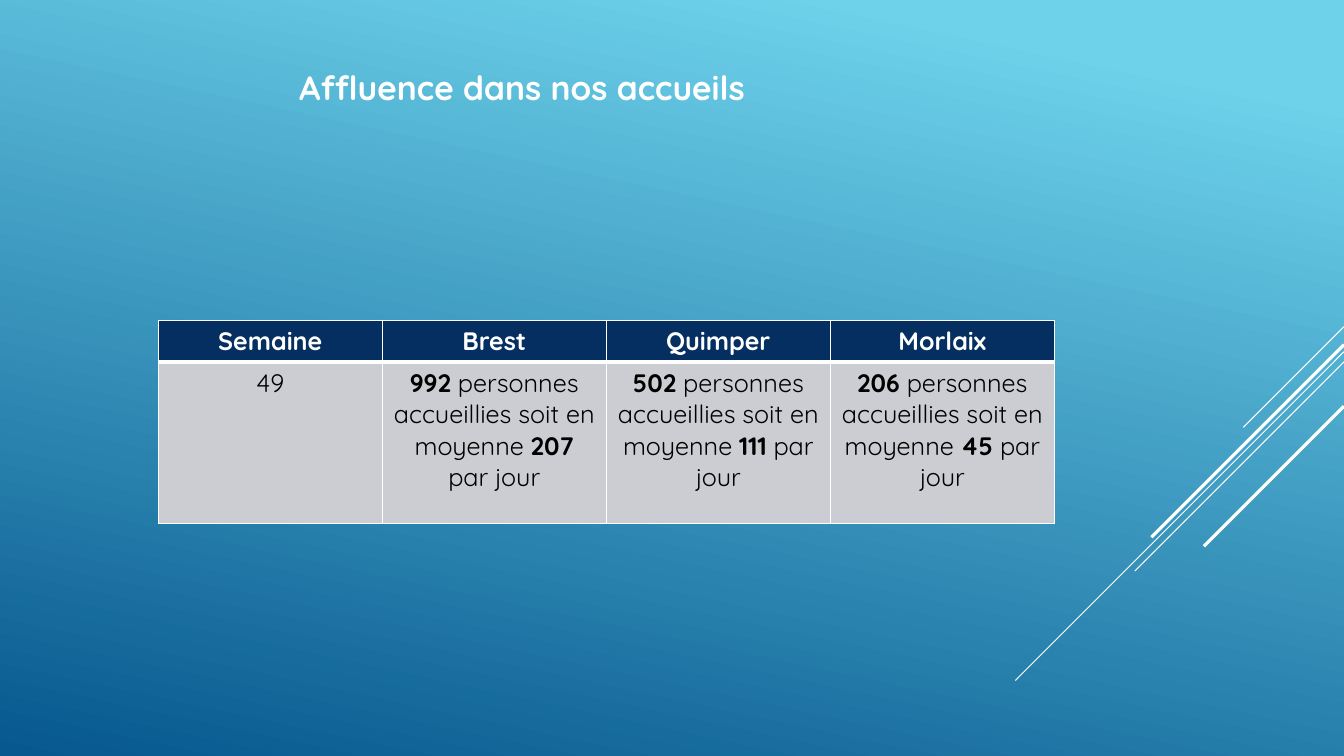
from dataclasses import dataclass

from lxml import etree
from pptx import Presentation
from pptx.dml.color import RGBColor
from pptx.enum.shapes import MSO_CONNECTOR
from pptx.enum.text import MSO_AUTO_SIZE, PP_ALIGN
from pptx.oxml.ns import qn
from pptx.util import Emu, Inches, Pt

STRAIGHT = MSO_CONNECTOR.STRAIGHT
CENTER = PP_ALIGN.CENTER
FIT_SHAPE = MSO_AUTO_SIZE.SHAPE_TO_FIT_TEXT

# The page is a grid of 160 columns by 90 rows of square cells.
GRID_COLUMNS, GRID_ROWS = 160, 90
CELL = Inches(1) / 12


@dataclass(frozen=True)
class Theme:
    font: str = "Quicksand"
    title_size: int = 24
    table_size: int = 18
    sky: str = "6ED2EB"
    sea: str = "06588E"
    white: str = "FFFFFF"
    black: str = "000000"
    header_fill: str = "052F61"
    body_fill: str = "CCCDD2"
    thin_border: float = 1
    thick_border: float = 3


@dataclass(frozen=True)
class Streak:
    """A 45° line falling leftwards from the right edge."""
    row: float
    reach: float
    weight: float


@dataclass(frozen=True)
class Span:
    text: str
    bold: bool = False


@dataclass(frozen=True)
class Office:
    city: str
    visitors: int
    daily_average: int

    def spans(self) -> list[Span]:
        return [
            Span(str(self.visitors), True),
            Span(" personnes accueillies soit en moyenne "),
            Span(str(self.daily_average), True),
            Span(" par jour"),
        ]


THEME = Theme()
STREAKS = [
    Streak(38.88, 12, 0.75),
    Streak(41.88, 39.12, 0.75),
    Streak(43.08, 24.9, 0.75),
    Streak(41.04, 22.92, 2.25),
    Streak(48.36, 16.68, 2.25),
]
WEEK = 49
OFFICES = [
    Office("Brest", 992, 207),
    Office("Quimper", 502, 111),
    Office("Morlaix", 206, 45),
]
TABLE_LEFT, TABLE_TOP = 18.84, 38.16
COLUMN_WIDTH = 26.67
ROW_HEIGHTS = [4.92, 19.2]


def grid(cells: float) -> Emu:
    return Emu(round(cells * CELL))


def color(value: str) -> RGBColor:
    return RGBColor.from_string(value)


def paint_background(page) -> None:
    fill = page.background.fill
    fill.gradient()
    fill.gradient_angle = 258
    stops = [(0.1, THEME.sky), (1, THEME.sea)]
    for stop, (position, value) in zip(fill.gradient_stops, stops):
        stop.position = position
        stop.color.rgb = color(value)


def add_streak(page, streak: Streak) -> None:
    line = page.shapes.add_connector(
        STRAIGHT,
        grid(GRID_COLUMNS), grid(streak.row),
        grid(GRID_COLUMNS - streak.reach), grid(streak.row + streak.reach),
    )
    line.line.color.rgb = color(THEME.white)
    line.line.width = Pt(streak.weight)
    etree.SubElement(line._element.spPr, qn("a:effectLst"))


def write(para, spans: list[Span], size: int, value: str) -> None:
    for span in spans:
        run = para.add_run()
        run.text = span.text
        run.font.name = THEME.font
        run.font.size = Pt(size)
        run.font.bold = span.bold
        run.font.color.rgb = color(value)


def add_title(page) -> None:
    box = page.shapes.add_textbox(grid(34.44), grid(7.32), grid(79.56), grid(6))
    frame = box.text_frame
    frame.word_wrap = True
    frame.auto_size = FIT_SHAPE
    title = [Span("Affluence dans nos accueils", True)]
    write(frame.paragraphs[0], title, THEME.title_size, THEME.white)


def add_borders(cell, top: float, bottom: float) -> None:
    sides = {"L": THEME.thin_border, "R": THEME.thin_border, "T": top, "B": bottom}
    properties = cell._tc.get_or_add_tcPr()
    for side, weight in sides.items():
        border = etree.SubElement(properties, qn(f"a:ln{side}"), w=str(Pt(weight)))
        fill = etree.SubElement(border, qn("a:solidFill"))
        etree.SubElement(fill, qn("a:srgbClr"), val=THEME.white)


def fill_cell(cell, spans: list[Span], header: bool) -> None:
    thin, thick = THEME.thin_border, THEME.thick_border
    add_borders(cell, *((thin, thick) if header else (thick, thin)))
    cell.fill.solid()
    cell.fill.fore_color.rgb = color(THEME.header_fill if header else THEME.body_fill)
    para = cell.text_frame.paragraphs[0]
    para.alignment = CENTER
    write(para, spans, THEME.table_size, THEME.white if header else THEME.black)


def add_attendance_table(page) -> None:
    headings = ["Semaine"] + [office.city for office in OFFICES]
    content = [
        [[Span(heading, True)] for heading in headings],
        [[Span(str(WEEK))]] + [office.spans() for office in OFFICES],
    ]
    table = page.shapes.add_table(
        len(content), len(headings), grid(TABLE_LEFT), grid(TABLE_TOP),
        grid(COLUMN_WIDTH * len(headings)), grid(sum(ROW_HEIGHTS)),
    ).table
    table.horz_banding = False
    for column in table.columns:
        column.width = grid(COLUMN_WIDTH)
    for row_index, (row, height) in enumerate(zip(table.rows, ROW_HEIGHTS)):
        row.height = grid(height)
        for cell, spans in zip(row.cells, content[row_index]):
            fill_cell(cell, spans, header=row_index == 0)


def main() -> None:
    deck = Presentation()
    deck.slide_width, deck.slide_height = grid(GRID_COLUMNS), grid(GRID_ROWS)
    page = deck.slides.add_slide(deck.slide_layouts[6])
    paint_background(page)
    for streak in STREAKS:
        add_streak(page, streak)
    add_title(page)
    add_attendance_table(page)
    deck.save("out.pptx")


if __name__ == "__main__":
    main()
